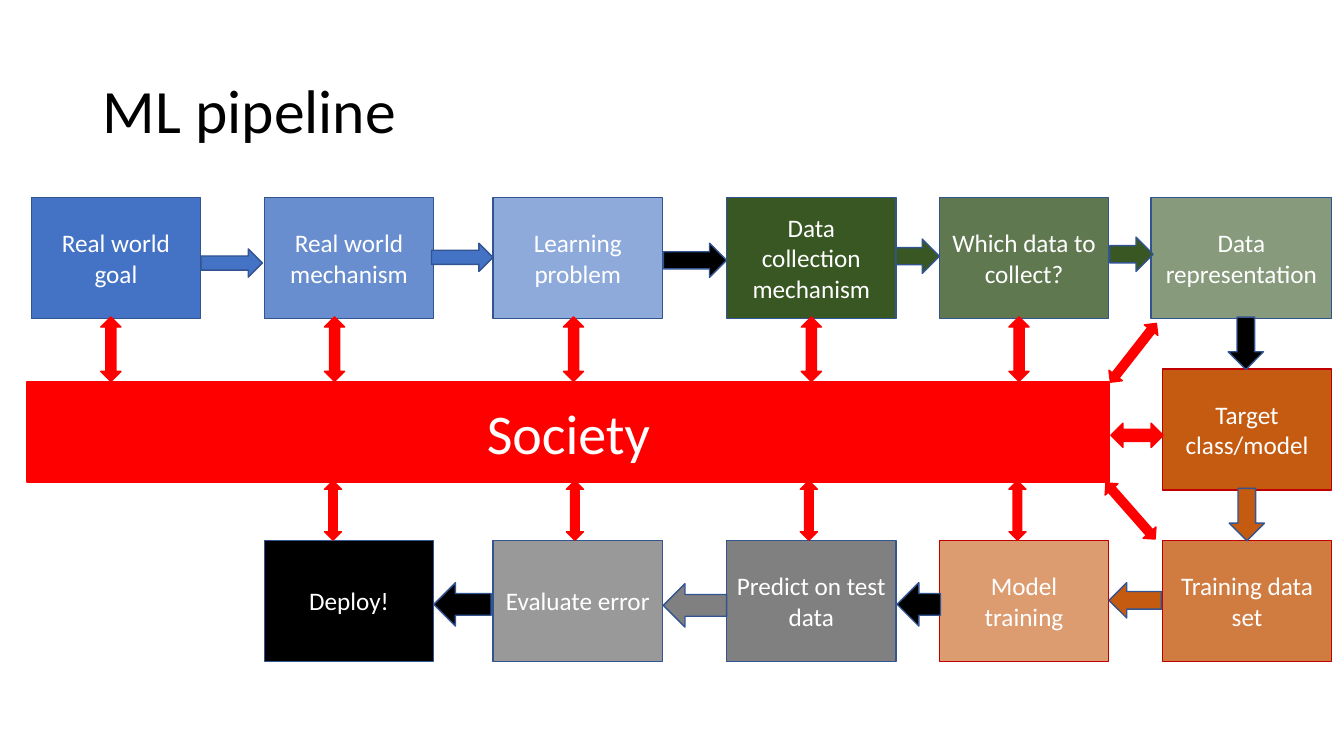
from lxml.etree import SubElement
from pptx import Presentation
from pptx.dml.color import RGBColor
from pptx.enum.shapes import MSO_SHAPE as Shape
from pptx.enum.text import MSO_ANCHOR as Anchor, PP_ALIGN as Align
from pptx.oxml.ns import qn
from pptx.util import Pt

FONT = "Calibri"
BLACK = RGBColor(0x00, 0x00, 0x00)
WHITE = RGBColor(0xFF, 0xFF, 0xFF)
BLUE = RGBColor(0x44, 0x72, 0xC4)
GREEN = RGBColor(0x38, 0x57, 0x23)
ORANGE = RGBColor(0xC5, 0x5A, 0x11)
GRAY = RGBColor(0x80, 0x80, 0x80)
RED = RGBColor(0xFF, 0x00, 0x00)
NAVY_LINE = RGBColor(0x32, 0x54, 0x91)
RED_LINE = RGBColor(0xC0, 0x00, 0x00)


def add_block(shapes, kind, bounds, fill, line, rotation=0, opacity=100):
    """Add a filled, outlined shape; bounds are left, top, width, height in points."""
    shape = shapes.add_shape(kind, *[Pt(value) for value in bounds])
    shape.shadow.inherit = False
    shape.rotation = rotation
    shape.fill.solid()
    shape.fill.fore_color.rgb = fill
    shape.line.color.rgb = line
    shape.line.width = Pt(1)
    if opacity < 100:
        color = shape.fill._xPr.find(qn("a:solidFill")).find(qn("a:srgbClr"))
        SubElement(color, qn("a:alpha"), val=str(opacity * 1000))
    return shape


def write_label(shape, text, size):
    frame = shape.text_frame
    frame.text = text
    frame.word_wrap = True
    frame.vertical_anchor = Anchor.MIDDLE
    paragraph = frame.paragraphs[0]
    paragraph.alignment = Align.CENTER
    font = paragraph.runs[0].font
    font.name, font.size, font.color.rgb = FONT, Pt(size), WHITE


presentation = Presentation()
presentation.slide_width, presentation.slide_height = Pt(960), Pt(540)
slide = presentation.slides.add_slide(presentation.slide_layouts[5])

title = slide.shapes.title
title.left, title.top, title.width, title.height = Pt(66.25), Pt(28.75), Pt(828), Pt(104.4)
title.text_frame.text = "ML pipeline"
title.text_frame.vertical_anchor = Anchor.MIDDLE
heading = title.text_frame.paragraphs[0]
heading.alignment = Align.LEFT
heading.line_spacing = 0.9
heading_font = heading.runs[0].font
heading_font.name, heading_font.size, heading_font.color.rgb = FONT, Pt(44), BLACK

# Pipeline steps: text, column, row, fill, opacity, line
COLUMNS = [22.3, 188.8, 352.2, 519, 671, 830.2]
ROWS = [141, 263.5, 386]
STEP_WIDTH, STEP_HEIGHT = 121, 86.5
WIDE_STEP = "Data representation"
EXTRA_WIDTH = 8
steps = [
    ("Real world goal", 0, 0, BLUE, 100, NAVY_LINE),
    ("Real world mechanism", 1, 0, BLUE, 80, NAVY_LINE),
    ("Learning problem", 2, 0, BLUE, 60, NAVY_LINE),
    ("Data collection mechanism", 3, 0, GREEN, 100, NAVY_LINE),
    ("Which data to collect?", 4, 0, GREEN, 80, NAVY_LINE),
    (WIDE_STEP, 5, 0, GREEN, 60, NAVY_LINE),
    ("Target class/model", 5, 1, ORANGE, 100, RED_LINE),
    ("Training data set", 5, 2, ORANGE, 80, RED_LINE),
    ("Model training", 4, 2, ORANGE, 60, RED_LINE),
    ("Predict on test data", 3, 2, GRAY, 100, NAVY_LINE),
    ("Evaluate error", 2, 2, GRAY, 80, NAVY_LINE),
    ("Deploy!", 1, 2, BLACK, 100, NAVY_LINE),
]
for text, column, row, fill, opacity, line in steps:
    extra = EXTRA_WIDTH if text == WIDE_STEP else 0
    bounds = (COLUMNS[column] - extra, ROWS[row], STEP_WIDTH + extra, STEP_HEIGHT)
    step = add_block(slide.shapes, Shape.RECTANGLE, bounds, fill, line, opacity=opacity)
    write_label(step, text, 18)

# Flow arrows: bounds before rotation, rotation, fill
flow_arrows = [
    ((143.5, 177.8, 44, 20.2), 0, BLUE),
    ((308.2, 173.7, 44, 20.2), 0, BLUE),
    ((473.8, 173.7, 45.2, 24.5), 0, BLACK),
    ((640, 170.8, 31, 24.5), 0, GREEN),
    ((792.7, 169.4, 31, 24.5), 0, GREEN),
    ((871.2, 232.6, 37.4, 25.2), 90, BLACK),
    ((871.9, 355, 37.4, 25.2), 90, ORANGE),
    ((792.2, 416.2, 37.4, 25.2), 180, ORANGE),
    ((640.8, 416.2, 31, 31), 180, BLACK),
    ((473.8, 416.9, 45.2, 31), 180, GRAY),
    ((309.8, 416.2, 41, 31), 180, BLACK),
]
for bounds, rotation, fill in flow_arrows:
    add_block(slide.shapes, Shape.RIGHT_ARROW, bounds, fill, NAVY_LINE, rotation)

# Society bar with its two-way arrows
society_shapes = slide.shapes.add_group_shape().shapes
society = add_block(society_shapes, Shape.RECTANGLE, (19.4, 272.9, 773.3, 71.3), RED, RED)
write_label(society, "Society", 40)

society_links = [((left, 226.4, 14.4, 46.1), 0) for left in (72, 231.8, 402.5, 572.4, 720.7)]
society_links += [((left, 343.4, 12.2, 42.5), 0) for left in (720.7, 571.7, 404.6, 231.8)]
society_links += [
    ((803.5, 292.3, 17.3, 37.4), 90),
    ((803.5, 225.4, 12.2, 53.3), 38),
    ((801.4, 338.4, 12.2, 53.3), 138.7),
]
for bounds, rotation in society_links:
    add_block(society_shapes, Shape.UP_DOWN_ARROW, bounds, RED, RED, rotation)

presentation.save("out.pptx")
